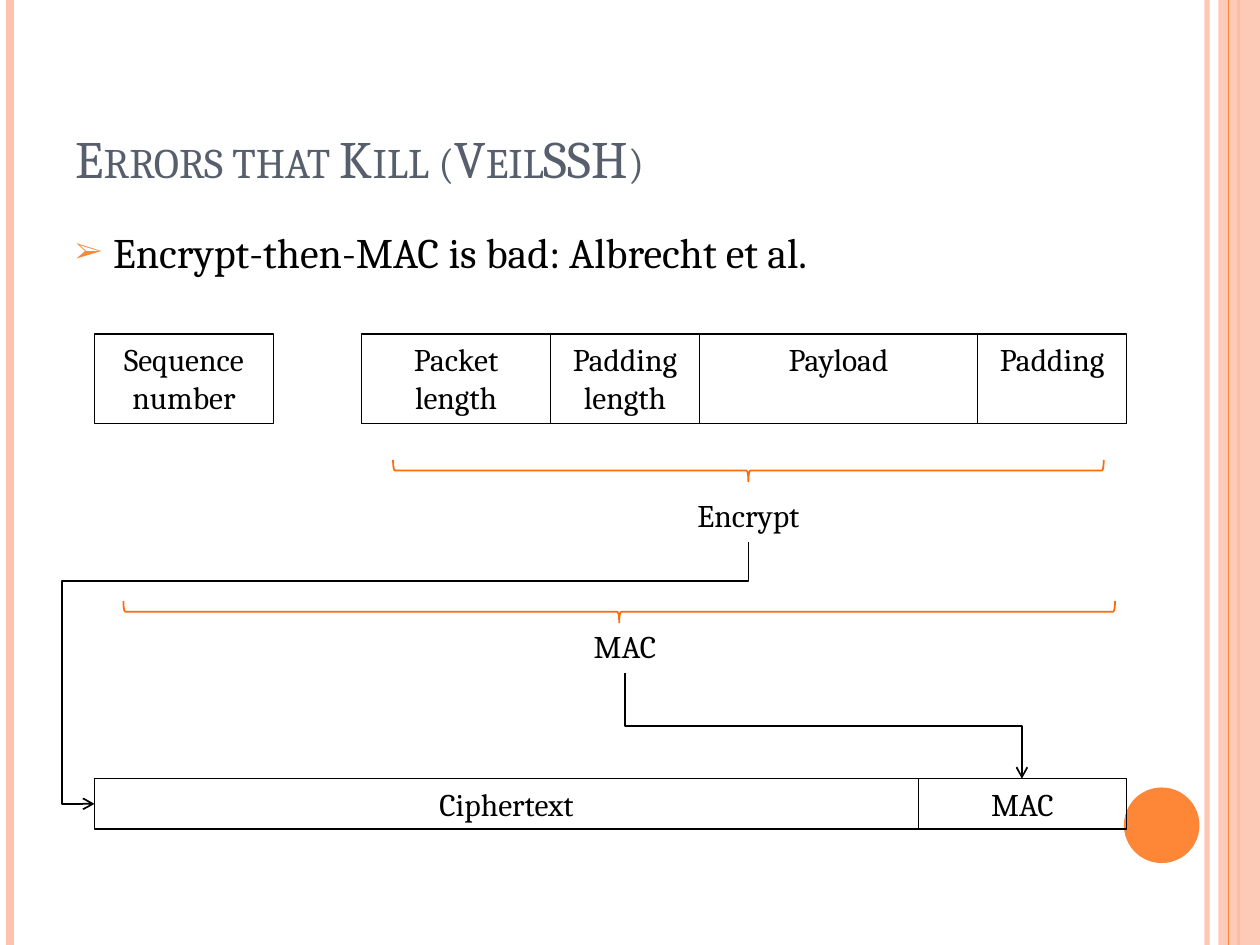
from lxml.etree import SubElement
from pptx import Presentation
from pptx.dml.color import RGBColor
from pptx.enum.shapes import MSO_CONNECTOR as Connector, MSO_SHAPE as Shape
from pptx.enum.text import MSO_ANCHOR as Anchor, PP_ALIGN as Align
from pptx.oxml.ns import qn
from pptx.util import Inches, Pt

COLORS = {"peach": "FEC3AE", "orange": "FE8637", "brace": "FF6B0A",
          "title": "575F6D", "ink": "000000"}
FONT = "Cambria"


def rgb(name):
    """Return the named colour."""
    return RGBColor.from_string(COLORS[name])


def set_alpha(fill, percent):
    """Make a solid fill partly transparent."""
    color = fill._xPr.find(qn("a:solidFill"))[0]
    SubElement(color, qn("a:alpha"), val=str(percent * 1000))


def style_font(paragraph, size, color="ink"):
    """Set the font of a whole paragraph."""
    font = paragraph.font
    font.name, font.size, font.color.rgb = FONT, Pt(size), rgb(color)


def style_line(connector, color, width):
    """Colour a connector and remove its shadow."""
    connector.line.color.rgb, connector.line.width = rgb(color), Pt(width)
    SubElement(connector._element.spPr, qn("a:effectLst"))


def add_outline(slide, kind, box, color, width):
    """Add an unfilled preset shape with a coloured outline."""
    shape = slide.shapes.add_shape(kind, *map(Inches, box))
    shape.shadow.inherit = False
    shape.fill.background()
    shape.line.color.rgb, shape.line.width = rgb(color), Pt(width)
    return shape


def add_solid(slide, kind, box, color):
    """Add a filled preset shape without an outline."""
    shape = slide.shapes.add_shape(kind, *map(Inches, box))
    shape.shadow.inherit = False
    shape.fill.solid()
    shape.fill.fore_color.rgb = rgb(color)
    shape.line.fill.background()
    return shape


def add_rule(slide, x, height, color, width):
    """Add a vertical line from the top edge."""
    rule = slide.shapes.add_connector(
        Connector.STRAIGHT, Inches(x), 0, Inches(x), Inches(height))
    style_line(rule, color, width)
    return rule


def add_backdrop(slide, width, height):
    """Draw the stripes at both sides and the page disc."""
    inner_rule = add_rule(slide, width - 0.42, height, "peach", 3)
    set_alpha(inner_rule.line.fill, 93)
    add_rule(slide, 0.08, height, "peach", 4.5)
    add_rule(slide, width - 0.17, height, "orange", 1.5)
    band = add_solid(slide, Shape.RECTANGLE, (width - 0.33, 0, 0.33, height), "peach")
    set_alpha(band.fill, 87)
    add_rule(slide, width - 0.25, height, "orange", 0.75)
    add_solid(slide, Shape.OVAL, (width - 1.08, height - 1.25, 0.6, 0.6), "orange")


def add_textbox(slide, box, text, anchor=Anchor.TOP):
    """Add a wrapping text box and return its only paragraph."""
    frame = slide.shapes.add_textbox(*map(Inches, box)).text_frame
    frame.word_wrap, frame.vertical_anchor = True, anchor
    frame.text = text
    return frame.paragraphs[0]


def add_heading(slide, left, top, width):
    """Write the title and the bullet below it."""
    title = add_textbox(slide, (left, top, width, 1.25),
                        "Errors that Kill (VeilSSH)", Anchor.BOTTOM)
    style_font(title, 30, "title")
    title.runs[0].font._element.set("cap", "small")

    claim = add_textbox(slide, (left, top + 1.45, width, 0.58),
                        "Encrypt-then-MAC is bad: Albrecht et al.")
    claim.space_before = Pt(6)
    props = claim._p.get_or_add_pPr()
    props.set("marL", str(Inches(0.3)))
    props.set("indent", str(Inches(-0.3)))
    bullet_color = SubElement(props, qn("a:buClr"))
    SubElement(bullet_color, qn("a:srgbClr"), val=COLORS["orange"])
    SubElement(props, qn("a:buSzPct"), val="70000")
    SubElement(props, qn("a:buFont"), typeface=FONT)
    SubElement(props, qn("a:buChar"), char="➢")
    style_font(claim, 24)


def add_fields(slide, left, top, height, fields):
    """Lay packet fields side by side from (label, width) pairs."""
    for label, width in fields:
        field = add_outline(slide, Shape.RECTANGLE, (left, top, width, height), "ink", 0.75)
        frame = field.text_frame
        frame.word_wrap, frame.vertical_anchor = True, Anchor.TOP
        frame.text = label
        for paragraph in frame.paragraphs:
            paragraph.alignment = Align.CENTER
            style_font(paragraph, 18)
        left += width


def add_step(slide, left, top, width, label, label_left, label_top):
    """Draw a brace opening upwards with the step name below it."""
    depth = 0.17
    box = (left + (width - depth) / 2, top + (depth - width) / 2, depth, width)
    add_outline(slide, Shape.LEFT_BRACE, box, "brace", 1).rotation = 270
    name = add_textbox(slide, (label_left, label_top, 1.18, 0.4), label)
    name.alignment = Align.CENTER
    style_font(name, 18)


def add_bent_arrow(slide, start, end, bends, adjustments=()):
    """Draw an elbow arrow that leaves its start downwards."""
    (x1, y1), (x2, y2) = start, end
    width, height = y2 - y1, abs(x2 - x1)
    left, top = (x1 + x2 - width) / 2, (y1 + y2 - height) / 2
    arrow = slide.shapes.add_connector(
        Connector.ELBOW, *map(Inches, (left, top, left + width, top + height)))
    properties = arrow._element.spPr
    frame = properties.find(qn("a:xfrm"))
    frame.set("rot", str((90 if x2 < x1 else 270) * 60000))
    if x2 > x1:
        frame.set("flipH", "1")
    geometry = properties.find(qn("a:prstGeom"))
    geometry.set("prst", f"bentConnector{bends + 1}")
    guides = geometry.find(qn("a:avLst"))
    for number, share in enumerate(adjustments, 1):
        SubElement(guides, qn("a:gd"), name=f"adj{number}",
                   fmla=f"val {round(share * 100000)}")
    style_line(arrow, "ink", 1)
    SubElement(arrow.line._get_or_add_ln(), qn("a:tailEnd"), type="arrow")


def add_packet_diagram(slide, left, top):
    """Draw the packet, its two protection steps and the result."""
    result_top = top + 3.53
    add_fields(slide, left, top, 0.71, [("Sequence\nnumber", 1.42)])
    add_fields(slide, left + 2.12, top, 0.71,
               [("Packet\nlength", 1.5), ("Padding\nlength", 1.18),
                ("Payload", 2.21), ("Padding", 1.18)])
    add_step(slide, left + 2.37, top + 1, 5.64, "Encrypt", left + 4.6, top + 1.24)
    add_step(slide, left + 0.23, top + 2.12, 7.87, "MAC", left + 3.62, top + 2.28)
    add_bent_arrow(slide, (left + 5.19, top + 1.65), (left, result_top + 0.2),
                   3, (0.15, 1.05))
    add_fields(slide, left, result_top, 0.4, [("Ciphertext", 6.54), ("MAC", 1.65)])
    add_bent_arrow(slide, (left + 4.21, top + 2.69), (left + 7.36, result_top), 2)


def main():
    """Build and save the slide."""
    deck = Presentation()
    deck.slide_width, deck.slide_height = Inches(10), Inches(7.5)
    slide = deck.slides.add_slide(deck.slide_layouts[6])
    add_backdrop(slide, 10, 7.5)
    add_heading(slide, 0.5, 0.3, 8.17)
    add_packet_diagram(slide, 0.75, 2.65)
    deck.save("out.pptx")


if __name__ == "__main__":
    main()
